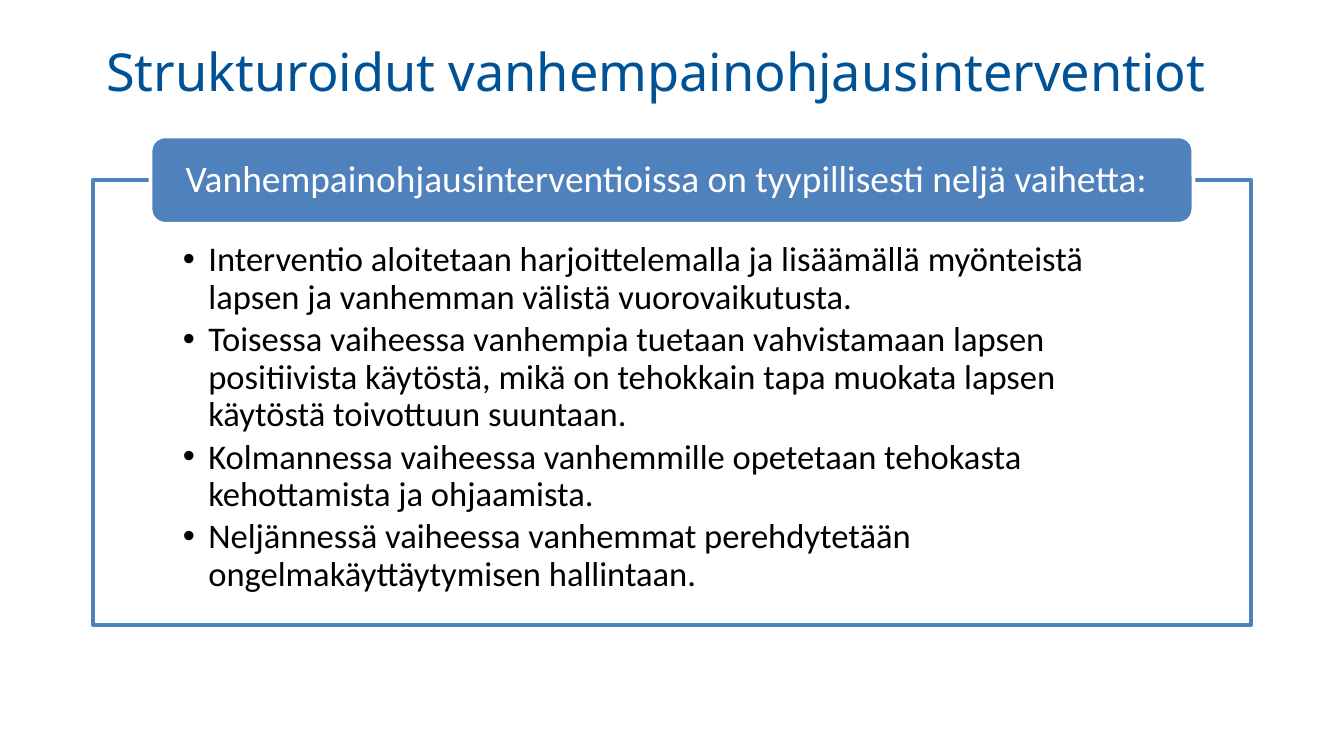
from dataclasses import dataclass

from lxml import etree
from pptx import Presentation
from pptx.dml.color import RGBColor
from pptx.enum.shapes import MSO_SHAPE
from pptx.enum.text import MSO_ANCHOR, MSO_AUTO_SIZE, PP_ALIGN
from pptx.oxml.ns import qn
from pptx.util import Inches, Pt

RECTANGLE = MSO_SHAPE.RECTANGLE
ROUNDED = MSO_SHAPE.ROUNDED_RECTANGLE
MIDDLE, TOP = MSO_ANCHOR.MIDDLE, MSO_ANCHOR.TOP
LEFT = PP_ALIGN.LEFT
FIXED = MSO_AUTO_SIZE.NONE


@dataclass(frozen=True)
class Theme:
    title_font: str = "Noto Sans"
    body_font: str = "Calibri"
    title_size: float = 28
    header_size: float = 20
    body_size: float = 18.5
    outline: float = 2
    panel_opacity: int = 90
    title_color: RGBColor = RGBColor(0x00, 0x52, 0x96)
    accent: RGBColor = RGBColor(0x4F, 0x81, 0xBD)
    ink: RGBColor = RGBColor(0x00, 0x00, 0x00)
    paper: RGBColor = RGBColor(0xFF, 0xFF, 0xFF)


THEME = Theme()

TITLE = "Strukturoidut vanhempainohjausinterventiot"
HEADER = "Vanhempainohjausinterventioissa on tyypillisesti neljä vaihetta:"
PHASES = [
    "Interventio aloitetaan harjoittelemalla ja lisäämällä myönteistä "
    "lapsen ja vanhemman välistä vuorovaikutusta.",
    "Toisessa vaiheessa vanhempia tuetaan vahvistamaan lapsen positiivista "
    "käytöstä, mikä on tehokkain tapa muokata lapsen käytöstä toivottuun suuntaan.",
    "Kolmannessa vaiheessa vanhemmille opetetaan tehokasta kehottamista ja ohjaamista.",
    "Neljännessä vaiheessa vanhemmat perehdytetään ongelmakäyttäytymisen hallintaan.",
]


def place(shape, left, top, width, height):
    shape.left, shape.top = Inches(left), Inches(top)
    shape.width, shape.height = Inches(width), Inches(height)


def set_frame(frame, anchor, left, top, right, bottom):
    frame.word_wrap = True
    frame.auto_size = FIXED
    frame.vertical_anchor = anchor
    frame.margin_left, frame.margin_top = Inches(left), Inches(top)
    frame.margin_right, frame.margin_bottom = Inches(right), Inches(bottom)


def style_para(para, font_name, size, color, line_spacing=1.0):
    para.alignment = LEFT
    para.line_spacing = line_spacing
    para.space_before = Pt(0)
    para.font.name = font_name
    para.font.size = Pt(size)
    para.font.color.rgb = color


def add_panel(page, kind, box, fill, line):
    panel = page.shapes.add_shape(kind, *[Inches(value) for value in box])
    panel.shadow.inherit = False
    panel.fill.solid()
    panel.fill.fore_color.rgb = fill
    panel.line.color.rgb = line
    panel.line.width = Pt(THEME.outline)
    return panel


def set_opacity(shape, percent):
    color = shape._element.spPr.find(qn("a:solidFill")).find(qn("a:srgbClr"))
    etree.SubElement(color, qn("a:alpha")).set("val", str(percent * 1000))


def add_bullet(para, indent):
    properties = para._p.get_or_add_pPr()
    properties.set("marL", str(Inches(indent)))
    properties.set("indent", str(-Inches(indent)))
    etree.SubElement(properties, qn("a:buFont")).set("typeface", "Arial")
    etree.SubElement(properties, qn("a:buChar")).set("char", "•")


def fill_title(page, box):
    title = page.shapes.title
    place(title, *box)
    set_frame(title.text_frame, MIDDLE, 0.1, 0.05, 0.1, 0.05)
    title.text_frame.text = TITLE
    style_para(title.text_frame.paragraphs[0], THEME.title_font,
               THEME.title_size, THEME.title_color)


def fill_phase_list(page, box):
    body = page.placeholders[1]
    place(body, *box)
    panel = add_panel(page, RECTANGLE, box, THEME.paper, THEME.accent)
    set_opacity(panel, THEME.panel_opacity)
    body._element.addprevious(panel._element)
    frame = body.text_frame
    set_frame(frame, TOP, 0.67, 0.46, 0.67, 0.15)
    frame.text = "\n".join(PHASES)
    for para in frame.paragraphs:
        add_bullet(para, 0.19)
        style_para(para, THEME.body_font, THEME.body_size, THEME.ink, 0.9)
        para.space_after = Pt(2.8)


def add_header(page, box):
    left, top, width, _ = box
    inset, height = 0.43, 0.65
    header_box = (left + inset, top - height / 2, width - 2 * inset, height)
    header = add_panel(page, ROUNDED, header_box, THEME.accent, THEME.paper)
    set_frame(header.text_frame, MIDDLE, 0.23, 0, 0.23, 0)
    header.text_frame.text = HEADER
    style_para(header.text_frame.paragraphs[0], THEME.body_font,
               THEME.header_size, THEME.paper, 0.9)


def main():
    deck = Presentation()
    deck.slide_width = Inches(10)
    deck.slide_height = deck.slide_width * 9 // 16
    page = deck.slides.add_slide(deck.slide_layouts[1])
    content = (0.69, 1.34, 8.62, 3.31)
    fill_title(page, (0.69, 0.24, 8.62, 0.57))
    fill_phase_list(page, content)
    add_header(page, content)
    deck.save("out.pptx")


if __name__ == "__main__":
    main()
